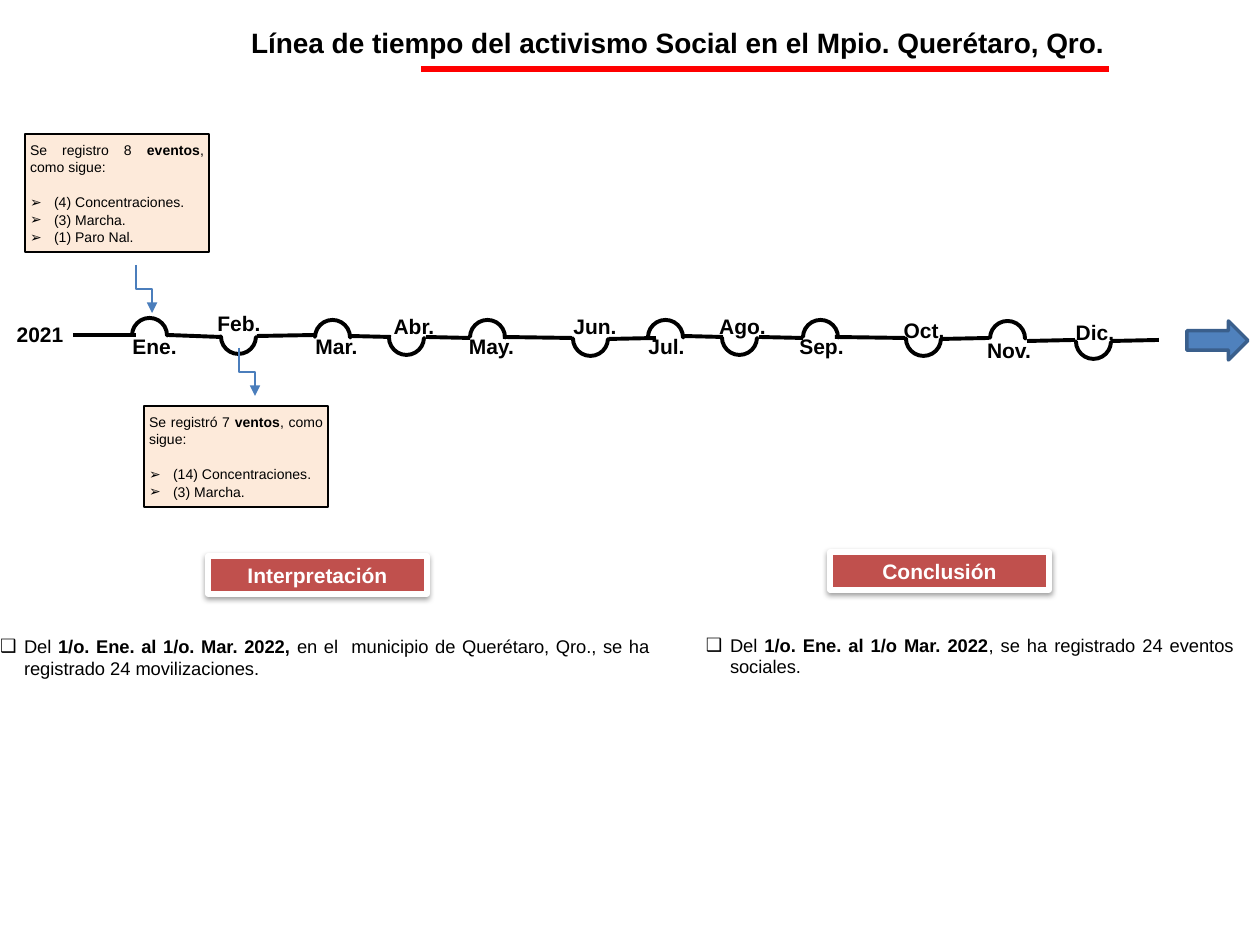
from lxml.etree import SubElement
from pptx import Presentation
from pptx.dml.color import RGBColor
from pptx.enum.shapes import MSO_CONNECTOR, MSO_SHAPE
from pptx.enum.text import MSO_ANCHOR, MSO_AUTO_SIZE, PP_ALIGN
from pptx.oxml.ns import qn
from pptx.util import Inches, Pt

SCALE = 914400 / 126
HEX = {"ink": "000000", "white": "FFFFFF", "red": "FF0000", "brick": "C0504D",
       "peach": "FDEADA", "blue": "4F81BD", "navy": "3A5F8C", "elbow": "4B7EBC"}
ARC = 35

# name, arc left, arc top, label shift, label top, label width
MONTHS = [
    ("Ene.", 132, 18, 0, 34, 45), ("Feb.", 221, 19, -4, 11, 44),
    ("Mar.", 315, 20, 0, 34, 43), ("Abr.", 389, 20, 4, 14, 42),
    ("May.", 470, 20, -1, 34, 45), ("Jun.", 573, 21, 0, 14, 44),
    ("Jul.", 648, 20, 0, 34, 37), ("Ago.", 722, 20, -3, 14, 47),
    ("Sep.", 803, 20, -4, 34, 45), ("Oct.", 906, 21, -3, 18, 42),
    ("Nov.", 990, 21, -3, 38, 44), ("Dic.", 1076, 24, 0, 20, 38),
]
LINKS = [
    (73, 35, 136, 35), (168, 35, 221, 37), (257, 36, 315, 35),
    (350, 36, 391, 37), (426, 37, 470, 38), (503, 37, 572, 38),
    (609, 39, 656, 38), (683, 36, 723, 37), (759, 37, 803, 38),
    (835, 37, 905, 38), (941, 39, 989, 38), (1027, 41, 1075, 40),
    (1111, 41, 1159, 40),
]


def px(n):
    return round(n * SCALE)


def tint(name):
    return RGBColor.from_string(HEX[name])


def setup(frame, pad=(0, 0), anchor=MSO_ANCHOR.TOP, wrap=True):
    """Set horizontal and vertical insets in inches, anchor and wrapping."""
    frame.margin_left = frame.margin_right = Inches(pad[0])
    frame.margin_top = frame.margin_bottom = Inches(pad[1])
    frame.vertical_anchor = anchor
    frame.word_wrap = wrap
    frame.auto_size = MSO_AUTO_SIZE.NONE


def fill_para(para, runs, size, align=PP_ALIGN.CENTER, color="ink", lead=None, mark=None):
    """Write (text, bold) runs, with an optional bullet mark."""
    if mark:
        props = para._p.get_or_add_pPr()
        props.set("marL", str(px(24)))
        props.set("indent", str(-px(24)))
        SubElement(props, qn("a:buFont"), typeface="Arial")
        SubElement(props, qn("a:buChar"), char=mark)
    para.alignment = align
    para.space_before = Pt(0)
    if lead:
        para.line_spacing = Pt(lead)
    for text, bold in runs:
        run = para.add_run()
        run.text = text
        font = run.font
        font.name, font.size, font.bold = "Arial", Pt(size), bold
        font.color.rgb = tint(color)


def place(item, x, y, w, h):
    item.left, item.top, item.width, item.height = map(px, (x, y, w, h))


def add_form(slide, kind, box, fill, line, width):
    form = slide.shapes.add_shape(kind, *map(px, box))
    form.shadow.inherit = False
    if fill:
        form.fill.solid()
        form.fill.fore_color.rgb = tint(fill)
    else:
        form.fill.background()
    form.line.color.rgb = tint(line)
    form.line.width = Pt(width)
    return form


def add_line(slide, ends, color, width, kind=MSO_CONNECTOR.STRAIGHT):
    line = slide.shapes.add_connector(kind, *map(px, ends))
    line.line.color.rgb = tint(color)
    line.line.width = Pt(width)
    SubElement(line.element.spPr, qn("a:effectLst"))
    return line


def add_label(slide, text, x, y, w):
    label = slide.shapes.add_textbox(*map(px, (x, y, w, 25)))
    setup(label.text_frame, wrap=False)
    fill_para(label.text_frame.paragraphs[0], [(text, True)], 12)


def add_elbow(slide, x, y, run=16, drop=48):
    """Draw an arrow that goes down, right, then down again."""
    left, top = x + (run - drop) // 2, y + (drop - run) // 2
    elbow = add_line(slide, (left, top, left + drop, top + run), "elbow", 0.75,
                     MSO_CONNECTOR.ELBOW)
    frame = elbow.element.spPr.find(qn("a:xfrm"))
    frame.set("rot", "16200000")
    frame.set("flipH", "1")
    SubElement(elbow.element.spPr.find(qn("a:ln")), qn("a:tailEnd"), type="triangle")


def add_title(slide, x, y, w, h):
    title = slide.shapes.title
    place(title, x, y, w, h)
    setup(title.text_frame, (0.1, 0.05))
    text = "Línea de tiempo del activismo Social en el Mpio. Querétaro, Qro."
    fill_para(title.text_frame.paragraphs[0], [(text, True)], 16)
    add_line(slide, (x + 331, y + 50, x + 1019, y + 50), "red", 3)


def add_months(slide, x, y):
    for x1, y1, x2, y2 in LINKS:
        add_line(slide, (x + x1, y + y1, x + x2, y + y2), "ink", 2.25)
    add_label(slide, "2021", x + 4, y + 22, 72)
    for i, (name, left, top, shift, base, wide) in enumerate(MONTHS):
        arc = add_form(slide, MSO_SHAPE.BLOCK_ARC, (x + left, y + top, ARC, ARC),
                       None, "ink", 2.25)
        for n, value in enumerate((108, 214.64, 0)):
            arc.adjustments[n] = value
        arc.element.spPr.find(qn("a:xfrm")).set("flipV", "1")
        arc.rotation = 0 if i % 2 else 180
        add_label(slide, name, x + left + shift, y + base, wide)
    add_form(slide, MSO_SHAPE.RIGHT_ARROW, (x + 1187, y + 21, 61, 39), "blue", "navy", 2)


def add_note(slide, box, intro, items):
    note = add_form(slide, MSO_SHAPE.RECTANGLE, box, "peach", "ink", 0.75)
    frame = note.text_frame
    setup(frame, (0.04, 0.05), MSO_ANCHOR.MIDDLE)
    head = frame.paragraphs[0]
    fill_para(head, intro, 8, PP_ALIGN.JUSTIFY, lead=10)
    head.space_after = Pt(10)
    for item in items:
        fill_para(frame.add_paragraph(), [(item, False)], 8, PP_ALIGN.JUSTIFY,
                  lead=10, mark="➢")


def add_panel(slide, body, box, shift, name, runs, lead):
    """Place a list with its banner, which sits at the given shift from the box."""
    x, y, w, h = box
    place(body, x, y, w, h)
    setup(body.text_frame)
    fill_para(body.text_frame.paragraphs[0], runs, 10.5, PP_ALIGN.JUSTIFY,
              lead=lead, mark="❑")
    banner = add_form(slide, MSO_SHAPE.RECTANGLE, (x + shift[0], y + shift[1], 219, 38),
                      "brick", "white", 3)
    setup(banner.text_frame, (0.1, 0.05), MSO_ANCHOR.MIDDLE)
    fill_para(banner.text_frame.paragraphs[0], [(name, True)], 12, color="white")
    shade = SubElement(banner.element.spPr.find(qn("a:effectLst")), qn("a:outerShdw"),
                       blurRad=str(Pt(3.1)), dist=str(Pt(1.6)), dir="5400000",
                       rotWithShape="0")
    ink = SubElement(shade, qn("a:srgbClr"), val=HEX["ink"])
    SubElement(ink, qn("a:alpha"), val="38000")


def main():
    deck = Presentation()
    deck.slide_width, deck.slide_height = Inches(10), Inches(7.5)
    slide = deck.slides.add_slide(deck.slide_layouts[3])
    add_title(slide, 90, 19, 1176, 47)
    add_months(slide, 0, 300)
    add_note(slide, (25, 134, 184, 118),
             [("Se registro 8 ", False), ("eventos", True), (", como sigue:", False)],
             ["(4) Concentraciones.", "(3) Marcha.", "(1) Paro Nal."])
    add_note(slide, (144, 406, 184, 101),
             [("Se registró 7 ", False), ("ventos", True), (", como sigue:", False)],
             ["(14) Concentraciones.", "(3) Marcha."])
    add_elbow(slide, 136, 265)
    add_elbow(slide, 239, 348)
    add_panel(slide, slide.placeholders[1], (0, 635, 650, 45), (208, -79), "Interpretación",
              [("Del ", False), ("1/o. Ene. al 1/o. Mar. 2022,", True),
               (" en el  municipio de Querétaro, Qro., se ha registrado 24 movilizaciones.",
                False)], 12.6)
    add_panel(slide, slide.placeholders[2], (706, 635, 528, 43), (124, -83), "Conclusión",
              [("Del ", False), ("1/o. Ene. al 1/o Mar. 2022", True),
               (", se ha registrado 24 eventos sociales.", False)], 12)
    deck.save("out.pptx")


if __name__ == "__main__":
    main()
